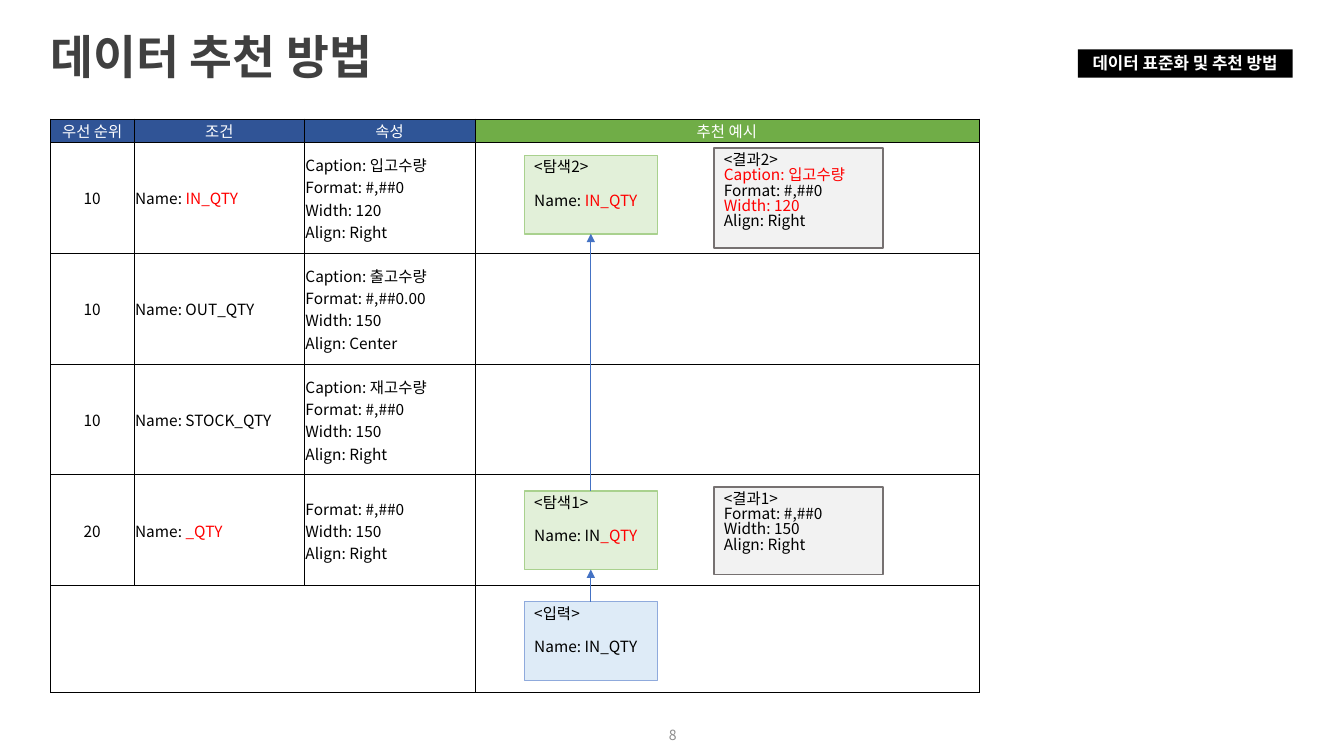
from dataclasses import dataclass
from pptx import Presentation
from pptx.dml.color import RGBColor
from pptx.enum.shapes import MSO_CONNECTOR, MSO_SHAPE
from pptx.enum.text import MSO_ANCHOR, PP_ALIGN
from pptx.oxml.ns import qn
from pptx.util import Inches, Pt
from lxml.etree import SubElement


@dataclass(frozen=True)
class Theme:
    font: str = "Noto Sans CJK KR"
    head: float = 33.3
    tag: float = 12
    body: float = 11
    page: float = 10
    dark: str = "404040"
    gray: str = "8C8C8C"
    black: str = "000000"
    white: str = "FFFFFF"
    red: str = "FF0000"
    navy: str = "305496"
    blue: str = "2F5597"
    green: str = "70AD47"
    arrow: str = "4472C4"
    input: tuple = ("DEEBF7", "8FAADC")
    search: tuple = ("E2F0D9", "A9D18E")
    result: tuple = ("F2F2F2", "767171")


THEME = Theme()
BOX_INS = (0.1, 0.05, 0.1, 0.05)
CELL_INS = (0.01, 0.01, 0.01, 0)


def rgb(code):
    return RGBColor.from_string(code)


def write(frame, text, size=THEME.body, color=THEME.black, bold=False,
          align=PP_ALIGN.LEFT, lead=None, gap=0):
    """Each line is a paragraph; pieces after a bar alternate to red."""
    for i, line in enumerate(text.split("\n")):
        para = frame.add_paragraph() if i else frame.paragraphs[0]
        para.alignment = align
        para.space_before = Pt(gap if i else 0)
        if lead:
            para.line_spacing = lead
        for j, piece in enumerate(line.split("|")):
            if not piece:
                continue
            run = para.add_run()
            run.text = piece
            font = run.font
            font.size, font.bold, font.name = Pt(size), bold, THEME.font
            font.color.rgb = rgb(THEME.red if j % 2 else color)
            SubElement(font._element, qn("a:ea"), typeface=THEME.font)


class Deck:
    def __init__(self, theme):
        self.theme = theme
        self.show = Presentation()
        self.show.slide_width = Inches(13.33)
        self.show.slide_height = Inches(7.5)
        self.slide = self.show.slides.add_slide(self.show.slide_layouts[5])

    def frame(self, shape, ins=BOX_INS, anchor=MSO_ANCHOR.TOP):
        frame = shape.text_frame
        frame.word_wrap = True
        frame.vertical_anchor = anchor
        (frame.margin_left, frame.margin_top,
         frame.margin_right, frame.margin_bottom) = map(Inches, ins)
        return frame

    def title(self, text, x, y, w, h):
        shape = self.slide.shapes.title
        shape.left, shape.top, shape.width, shape.height = map(Inches, (x, y, w, h))
        write(self.frame(shape, (0, 0.05, 0.1, 0.05)), text, size=self.theme.head,
              color=self.theme.dark, bold=True, lead=0.7)

    def label(self, text, x, y, w, h, **style):
        shape = self.slide.shapes.add_textbox(*map(Inches, (x, y, w, h)))
        write(self.frame(shape, anchor=MSO_ANCHOR.MIDDLE), text, **style)

    def box(self, text, x, y, w, h, fill, line=None, ins=BOX_INS,
            anchor=MSO_ANCHOR.TOP, **style):
        shape = self.slide.shapes.add_shape(MSO_SHAPE.RECTANGLE, *map(Inches, (x, y, w, h)))
        shape.shadow.inherit = False
        shape.fill.solid()
        shape.fill.fore_color.rgb = rgb(fill)
        if line:
            shape.line.color.rgb = rgb(line)
            shape.line.width = Pt(1)
        else:
            shape.line.fill.background()
        write(self.frame(shape, ins, anchor), text, **style)

    def arrow(self, x, start, end):
        link = self.slide.shapes.add_connector(
            MSO_CONNECTOR.STRAIGHT, *map(Inches, (x, start, x, end)))
        link.line.color.rgb = rgb(self.theme.arrow)
        link.line.width = Pt(0.5)
        SubElement(link.line._get_or_add_ln(), qn("a:tailEnd"), type="triangle")
        SubElement(link._element.spPr, qn("a:effectLst"))

    def cell(self, cell, text, fill, **style):
        cell.vertical_anchor = MSO_ANCHOR.MIDDLE
        (cell.margin_left, cell.margin_top,
         cell.margin_right, cell.margin_bottom) = map(Inches, CELL_INS)
        props = cell._tc.get_or_add_tcPr()
        for side in ("lnL", "lnR", "lnT", "lnB"):
            edge = SubElement(props, qn(f"a:{side}"), w=str(Pt(0.5)))
            paint = SubElement(edge, qn("a:solidFill"))
            SubElement(paint, qn("a:srgbClr"), val=self.theme.black)
        cell.fill.solid()
        cell.fill.fore_color.rgb = rgb(fill)
        write(cell.text_frame, text, **style)

    def table(self, x, y, cols, rows, heads, fills, data):
        grid = self.slide.shapes.add_table(
            len(rows), len(cols), *map(Inches, (x, y, sum(cols), sum(rows)))).table
        for col, width in zip(grid.columns, cols):
            col.width = Inches(width)
        for row, height in zip(grid.rows, rows):
            row.height = Inches(height)
        for c, (text, fill) in enumerate(zip(heads, fills)):
            self.cell(grid.cell(0, c), text, fill,
                      color=self.theme.white, align=PP_ALIGN.CENTER)
        for r, line in enumerate(data, 1):
            for c, text in enumerate(line):
                self.cell(grid.cell(r, c), text, self.theme.white,
                          align=PP_ALIGN.LEFT if c else PP_ALIGN.CENTER)
        last = len(rows) - 1
        grid.cell(last, 0).merge(grid.cell(last, 2))


def main():
    deck = Deck(THEME)
    deck.title("데이터 추천 방법", 0.5, 0.38, 12.21, 0.54)
    deck.label("8", 6.27, 7.16, 0.54, 0.27, size=THEME.page,
               color=THEME.gray, align=PP_ALIGN.RIGHT)
    deck.box("데이터 표준화 및 추천 방법", 10.69, 0.49, 2.13, 0.28, THEME.black,
             ins=(0.1, 0.05, 0.1, 0.04), anchor=MSO_ANCHOR.MIDDLE, size=THEME.tag,
             color=THEME.white, bold=True, align=PP_ALIGN.CENTER, lead=0.9)
    deck.table(
        0.5, 1.18, (0.83, 1.69, 1.69, 5), (0.23, 1.1, 1.1, 1.1, 1.1, 1.06),
        ("우선 순위", "조건", "속성", "추천 예시"),
        (THEME.navy, THEME.navy, THEME.blue, THEME.green),
        (("10", "Name: |IN_QTY",
          "Caption: 입고수량\nFormat: #,##0\nWidth: 120\nAlign: Right", ""),
         ("10", "Name: OUT_QTY",
          "Caption: 출고수량\nFormat: #,##0.00\nWidth: 150\nAlign: Center", ""),
         ("10", "Name: STOCK_QTY",
          "Caption: 재고수량\nFormat: #,##0\nWidth: 150\nAlign: Right", ""),
         ("20", "Name: |_QTY", "Format: #,##0\nWidth: 150\nAlign: Right", ""),
         ("", "", "", "")))

    for text, top, look in (
            ("<입력>\nName: IN_QTY", 5.97, THEME.input),
            ("<탐색1>\nName: IN|_QTY", 4.87, THEME.search),
            ("<탐색2>\nName: |IN_QTY", 1.54, THEME.search)):
        deck.box(text, 5.2, top, 1.32, 0.78, *look, lead=0.83, gap=13)
    for text, top, high in (
            ("<결과1>\nFormat: #,##0\nWidth: 150\nAlign: Right", 4.83, 0.87),
            ("<결과2>\n|Caption: 입고수량\nFormat: #,##0\n|Width: 120\nAlign: Right",
             1.47, 0.99)):
        deck.box(text, 7.08, top, 1.68, high, *THEME.result, lead=0.83)
    for start, end in ((5.97, 5.65), (4.87, 2.32)):
        deck.arrow(5.86, start, end)
    deck.show.save("out.pptx")


if __name__ == "__main__":
    main()
